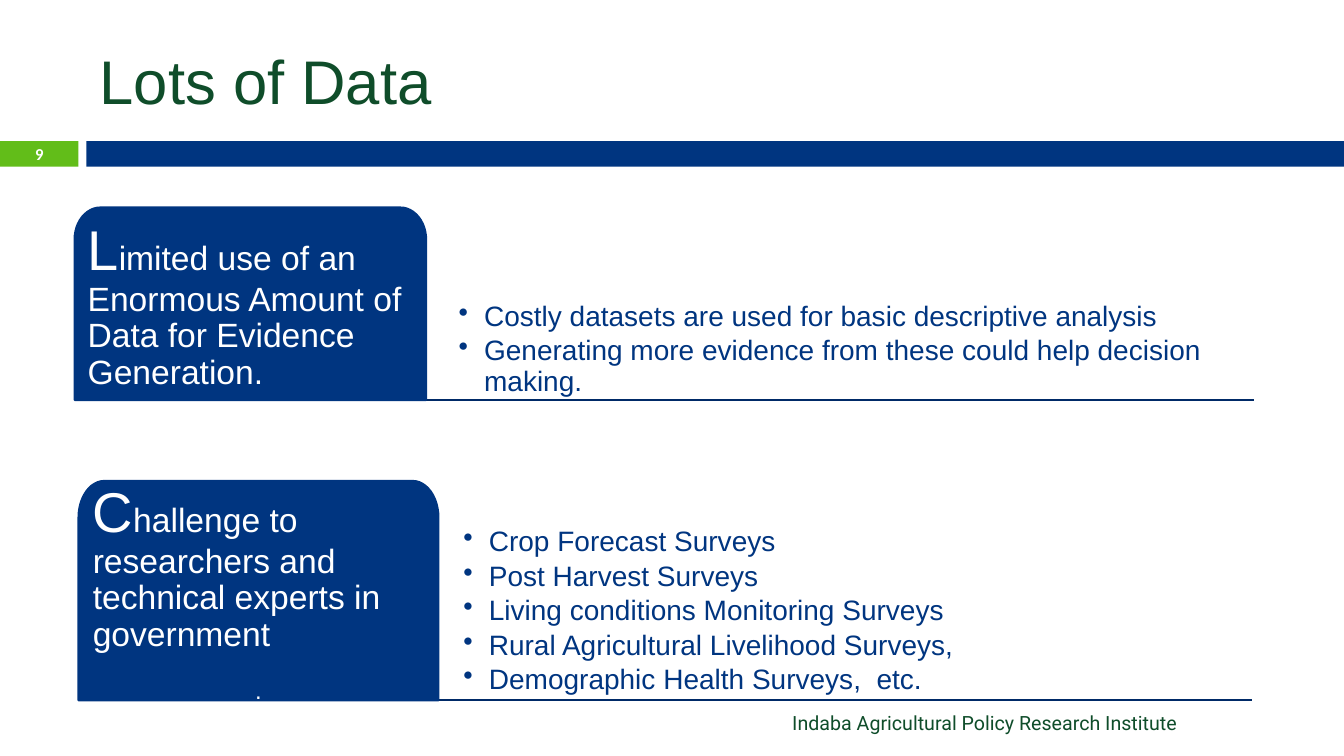
from math import cos, pi, sin

from lxml.etree import SubElement
from pptx import Presentation
from pptx.dml.color import RGBColor
from pptx.enum.shapes import MSO_CONNECTOR, MSO_SHAPE
from pptx.enum.text import MSO_ANCHOR, PP_ALIGN
from pptx.oxml.ns import qn
from pptx.util import Cm, Pt

NAVY = RGBColor(0x00, 0x35, 0x80)
DARK_NAVY = RGBColor(0x00, 0x2A, 0x67)
LIME = RGBColor(0x62, 0xBD, 0x19)
FOREST = RGBColor(0x0F, 0x4D, 0x2A)
WHITE = RGBColor(0xFF, 0xFF, 0xFF)


def add_run(p, text, size=24, color=WHITE, font="Arial", bold=False):
    r = p.add_run()
    r.text = text
    r.font.size = Pt(size)
    r.font.name = font
    r.font.bold = bold
    r.font.color.rgb = color


def set_frame(tf, anchor, left, top, right, bottom):
    tf.word_wrap = True
    tf.vertical_anchor = anchor
    tf.margin_left, tf.margin_top = Cm(left), Cm(top)
    tf.margin_right, tf.margin_bottom = Cm(right), Cm(bottom)


def add_label(s, box, text, align, **fmt):
    sp = s.shapes.add_textbox(*map(Cm, box))
    set_frame(sp.text_frame, MSO_ANCHOR.MIDDLE, 0.25, 0.13, 0.25, 0.13)
    p = sp.text_frame.paragraphs[0]
    p.alignment = align
    add_run(p, text, **fmt)


def add_bar(s, left, width, color):
    sp = s.shapes.add_shape(MSO_SHAPE.RECTANGLE, Cm(left), Cm(3.56), Cm(width), Cm(0.64))
    sp.shadow.inherit = False
    sp.fill.solid()
    sp.fill.fore_color.rgb = color
    sp.line.fill.background()


def add_rule(s, left, y):
    line = s.shapes.add_connector(
        MSO_CONNECTOR.STRAIGHT, Cm(left), Cm(y), Cm(left + 29.21), Cm(y))
    line.line.color.rgb = DARK_NAVY
    line.line.width = Pt(1.5)
    SubElement(line._element.spPr, qn("a:effectLst"))


def add_tab(s, left, top, width, height, inset, initial, rest):
    rx, ry = 0.65, height / 6
    angles = [i * pi / 24 for i in range(13)]
    left_arc = [(left + rx * (1 - cos(a)), top + ry * (1 - sin(a))) for a in angles]
    right_arc = [(2 * left + width - x, y) for x, y in reversed(left_arc)]
    bottom = top + height
    points = [(Cm(x), Cm(y)) for x, y in
              left_arc + right_arc + [(left + width, bottom), (left, bottom)]]
    builder = s.shapes.build_freeform(*points[0])
    builder.add_line_segments(points[1:], close=True)
    sp = builder.convert_to_shape()
    sp.shadow.inherit = False
    sp.fill.solid()
    sp.fill.fore_color.rgb = NAVY
    sp.line.color.rgb = NAVY
    sp.line.width = Pt(1.5)
    set_frame(sp.text_frame, MSO_ANCHOR.MIDDLE, inset, inset, inset, 0.18)
    p = sp.text_frame.paragraphs[0]
    p.alignment = PP_ALIGN.LEFT
    p.line_spacing = 0.9
    add_run(p, initial, size=40)
    add_run(p, rest)
    return sp.text_frame


def add_list(s, box, indent, items):
    tf = s.shapes.add_textbox(*map(Cm, box)).text_frame
    set_frame(tf, MSO_ANCHOR.BOTTOM, 0.1, 0.1, 0.1, 0.1)
    for i, item in enumerate(items):
        p = tf.add_paragraph() if i else tf.paragraphs[0]
        p.line_spacing = 0.9
        p.space_after = Pt(3)
        pPr = p._p.get_or_add_pPr()
        pPr.set("marL", str(Cm(indent)))
        pPr.set("indent", str(-Cm(0.64)))
        SubElement(pPr, qn("a:buChar")).set("char", "•")
        add_run(p, item, size=20, color=NAVY)


def add_title(s, text):
    title = s.shapes.title
    title.left, title.top, title.width, title.height = map(Cm, (2.26, 0.64, 30.2, 2.74))
    title.text_frame.vertical_anchor = MSO_ANCHOR.MIDDLE
    p = title.text_frame.paragraphs[0]
    p.alignment = PP_ALIGN.LEFT
    add_run(p, text, size=44, color=FOREST)


def main():
    prs = Presentation()
    prs.slide_width, prs.slide_height = Cm(33.87), Cm(19.05)
    s = prs.slides.add_slide(prs.slide_layouts[5])

    add_title(s, "Lots of Data")
    add_bar(s, 0, 1.98, LIME)
    add_bar(s, 2.18, 31.69, NAVY)
    add_label(s, (0, 3.53, 1.98, 0.69), "9", PP_ALIGN.CENTER,
              size=11.9, font="Calibri", bold=True)
    add_label(s, (15.52, 17.78, 14.4, 0.86), "Indaba Agricultural Policy Research Institute",
              PP_ALIGN.RIGHT, size=14, color=FOREST, font="Roboto")

    add_rule(s, 2.39, 10.08)
    add_list(s, (11.46, 6.81, 21.41, 3.3), 0.64, [
        "Costly datasets are used for basic descriptive analysis",
        "Generating more evidence from these could help decision making.",
    ])
    add_tab(s, 1.88, 5.23, 8.86, 4.85, 0.33, "L",
            "imited use of an Enormous Amount of Data for Evidence Generation.")

    add_rule(s, 2.34, 17.65)
    tf = add_tab(s, 1.98, 12.12, 9.07, 5.53, 0.36, "C",
                 "hallenge to researchers and technical experts in government")
    tf.paragraphs[0].space_after = Pt(18)
    p = tf.add_paragraph()
    p.alignment = PP_ALIGN.CENTER
    p.line_spacing = 0.9
    add_run(p, ".", size=17)
    add_list(s, (10.95, 13.34, 21.62, 4.29), 1.27, [
        "Crop Forecast Surveys",
        "Post Harvest Surveys",
        "Living conditions Monitoring Surveys",
        "Rural Agricultural Livelihood Surveys,",
        "Demographic Health Surveys,  etc.",
    ])

    prs.save("out.pptx")


if __name__ == "__main__":
    main()
